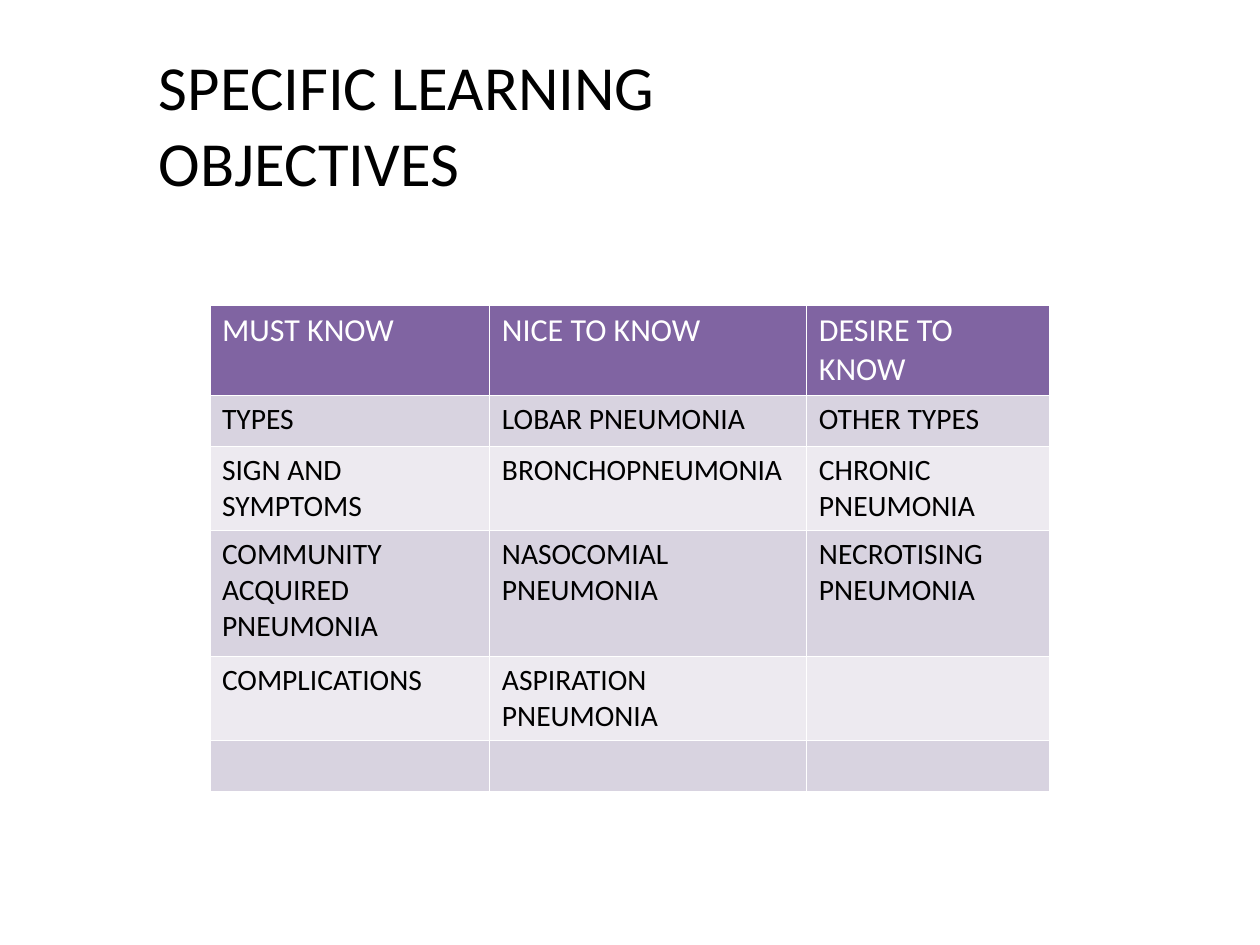
import dataclasses

import pptx
import pptx.dml.color
import pptx.enum.text
import pptx.oxml
import pptx.oxml.ns
import pptx.util

PX = 10320  # EMU per px
COLORS = {"white": "FFFFFF", "black": "000000", "header": "8064A2",
          "odd": "D8D3E0", "even": "EDEAF0"}
INSETS = {"margin_left": 12, "margin_right": 12, "margin_top": 6, "margin_bottom": 6}
COLUMN_WIDTHS = (280, 317, 243)


@dataclasses.dataclass(frozen=True)
class Row:
    height: int
    texts: tuple[str, str, str]


ROWS = (
    Row(88, ("MUST KNOW", "NICE TO KNOW", "DESIRE TO KNOW")),
    Row(51, ("TYPES", "LOBAR PNEUMONIA", "OTHER TYPES")),
    Row(84, ("SIGN AND SYMPTOMS", "BRONCHOPNEUMONIA", "CHRONIC PNEUMONIA")),
    Row(126, ("COMMUNITY ACQUIRED PNEUMONIA", "NASOCOMIAL PNEUMONIA",
              "NECROTISING PNEUMONIA")),
    Row(83, ("COMPLICATIONS", "ASPIRATION PNEUMONIA", "")),
    Row(51, ("", "", "")),
)


def px(n: int) -> int:
    return n * PX


def rgb(name: str) -> pptx.dml.color.RGBColor:
    return pptx.dml.color.RGBColor.from_string(COLORS[name])


def set_attributes(target, values: dict) -> None:
    for name, value in values.items():
        setattr(target, name, value)


def set_insets(target) -> None:
    set_attributes(target, {name: px(n) for name, n in INSETS.items()})


def format_font(font, size: int, color: str) -> None:
    set_attributes(font, {"name": "Calibri", "size": pptx.util.Pt(size), "bold": False})
    font.color.rgb = rgb(color)


def add_borders(cell) -> None:
    tc_pr = cell._tc.get_or_add_tcPr()
    for side in ("lnL", "lnR", "lnT", "lnB"):
        tc_pr.append(pptx.oxml.parse_xml(
            f'<a:{side} {pptx.oxml.ns.nsdecls("a")} w="12700"><a:solidFill>'
            f'<a:srgbClr val="{COLORS["white"]}"/></a:solidFill></a:{side}>'))


def draw_title(s, text: str) -> None:
    sp = s.shapes.title
    set_attributes(sp, {"left": px(147), "top": px(42), "width": px(609), "height": px(166)})
    tf = sp.text_frame
    set_insets(tf)
    set_attributes(tf, {"word_wrap": True,
                        "auto_size": pptx.enum.text.MSO_AUTO_SIZE.NONE,
                        "vertical_anchor": pptx.enum.text.MSO_ANCHOR.TOP})
    p = tf.paragraphs[0]
    p.alignment = pptx.enum.text.PP_ALIGN.LEFT
    r = p.add_run()
    r.text = text
    format_font(r.font, 51, "black")


def draw_cell(cell, text: str, fill: str, size: int, color: str) -> None:
    set_insets(cell)
    add_borders(cell)
    cell.fill.solid()
    cell.fill.fore_color.rgb = rgb(fill)
    if text:
        r = cell.text_frame.paragraphs[0].add_run()
        r.text = text
        format_font(r.font, size, color)


def draw_table(s, rows: tuple[Row, ...]) -> None:
    table = s.shapes.add_table(
        len(rows), len(COLUMN_WIDTHS), px(210), px(305),
        px(sum(COLUMN_WIDTHS)), px(sum(row.height for row in rows))).table
    for column, width in zip(table.columns, COLUMN_WIDTHS):
        column.width = px(width)
    for i, row in enumerate(rows):
        table.rows[i].height = px(row.height)
        if i == 0:
            look = ("header", 26, "white")
        else:
            look = ("odd" if i % 2 else "even", 24, "black")
        for j, text in enumerate(row.texts):
            draw_cell(table.cell(i, j), text, *look)


def main() -> None:
    prs = pptx.Presentation()
    set_attributes(prs, {"slide_width": px(1260), "slide_height": px(945)})
    s = prs.slides.add_slide(prs.slide_layouts[5])
    # Heading
    draw_title(s, "SPECIFIC LEARNING OBJECTIVES")
    # Objectives by priority
    draw_table(s, ROWS)
    prs.save("out.pptx")


if __name__ == "__main__":
    main()
